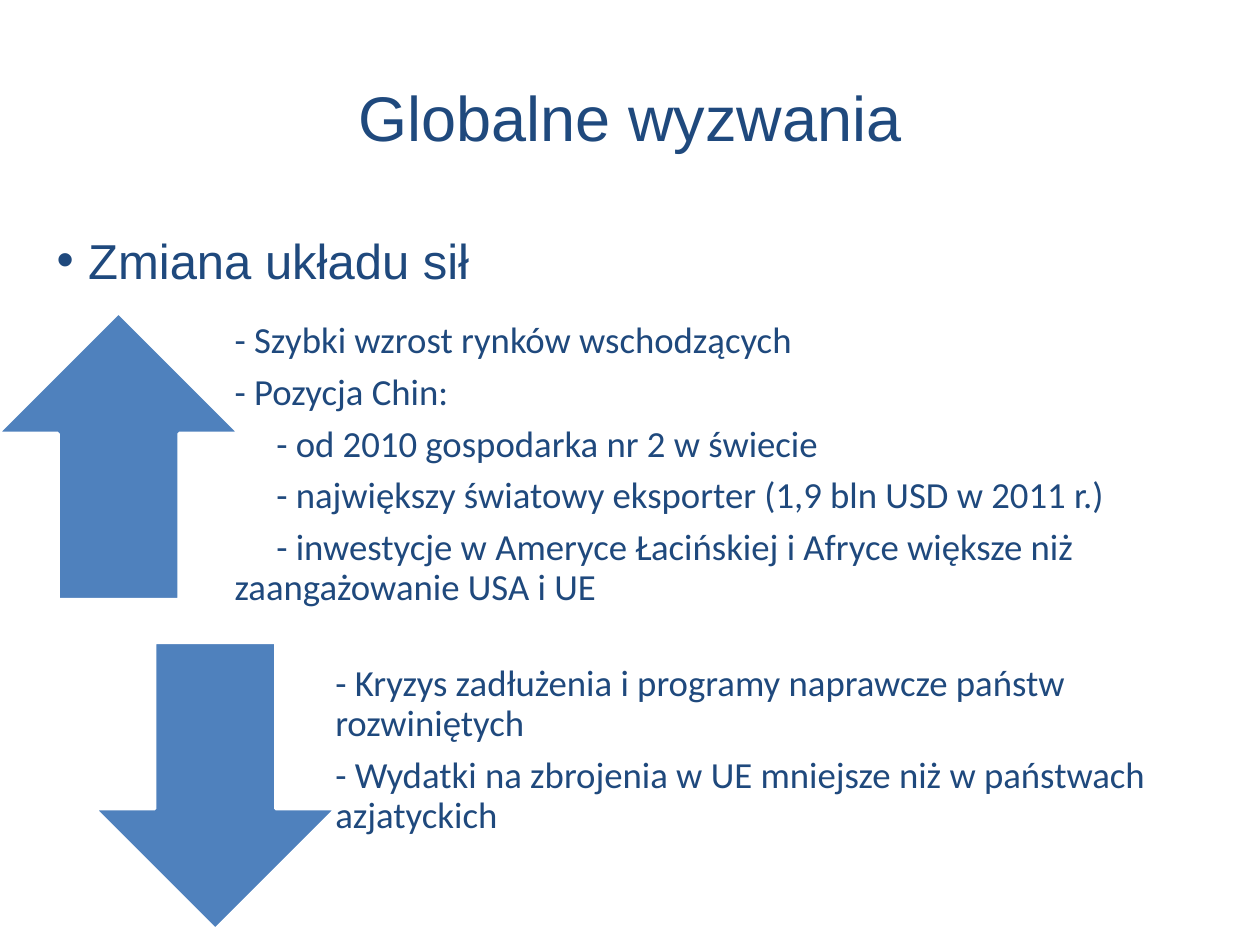
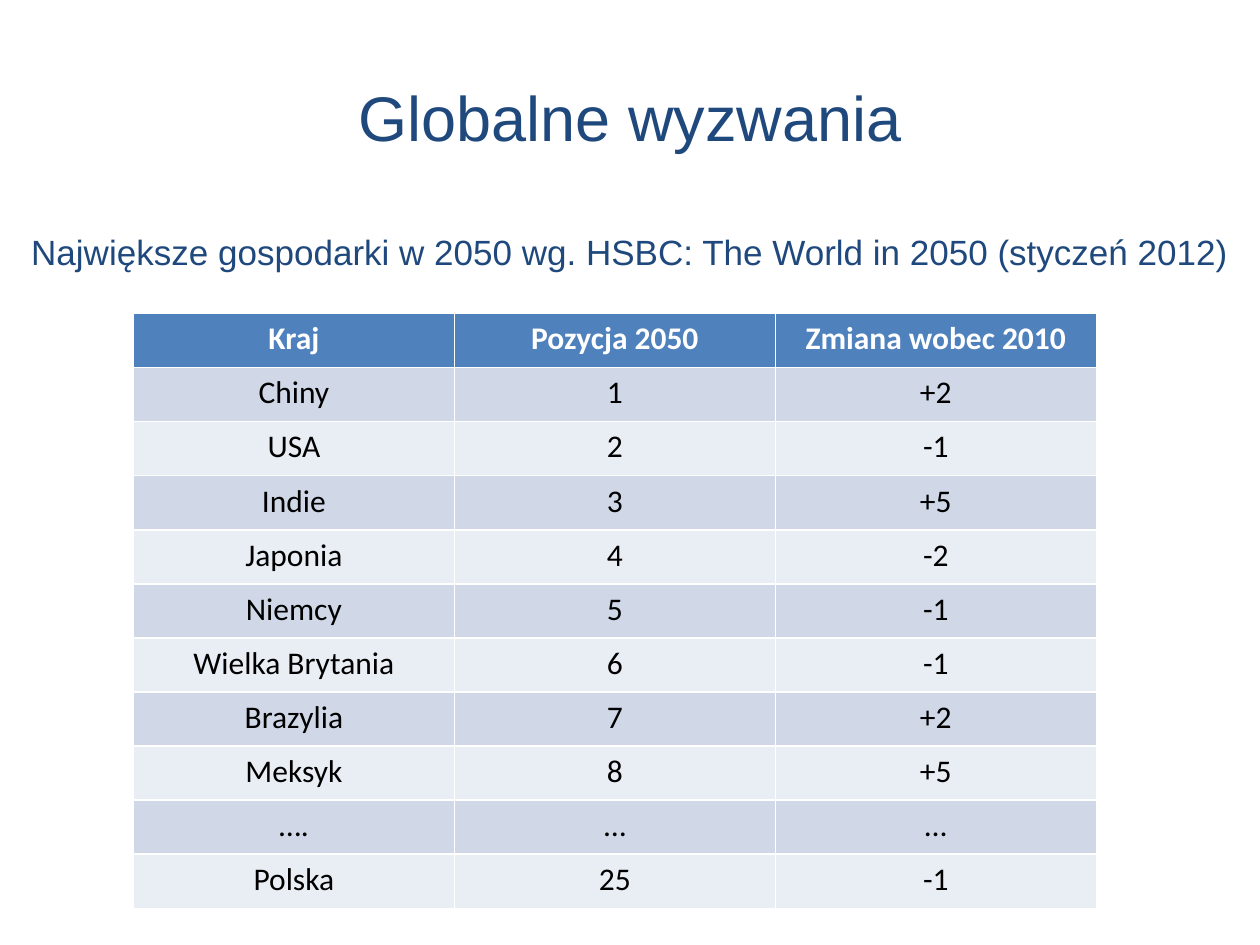
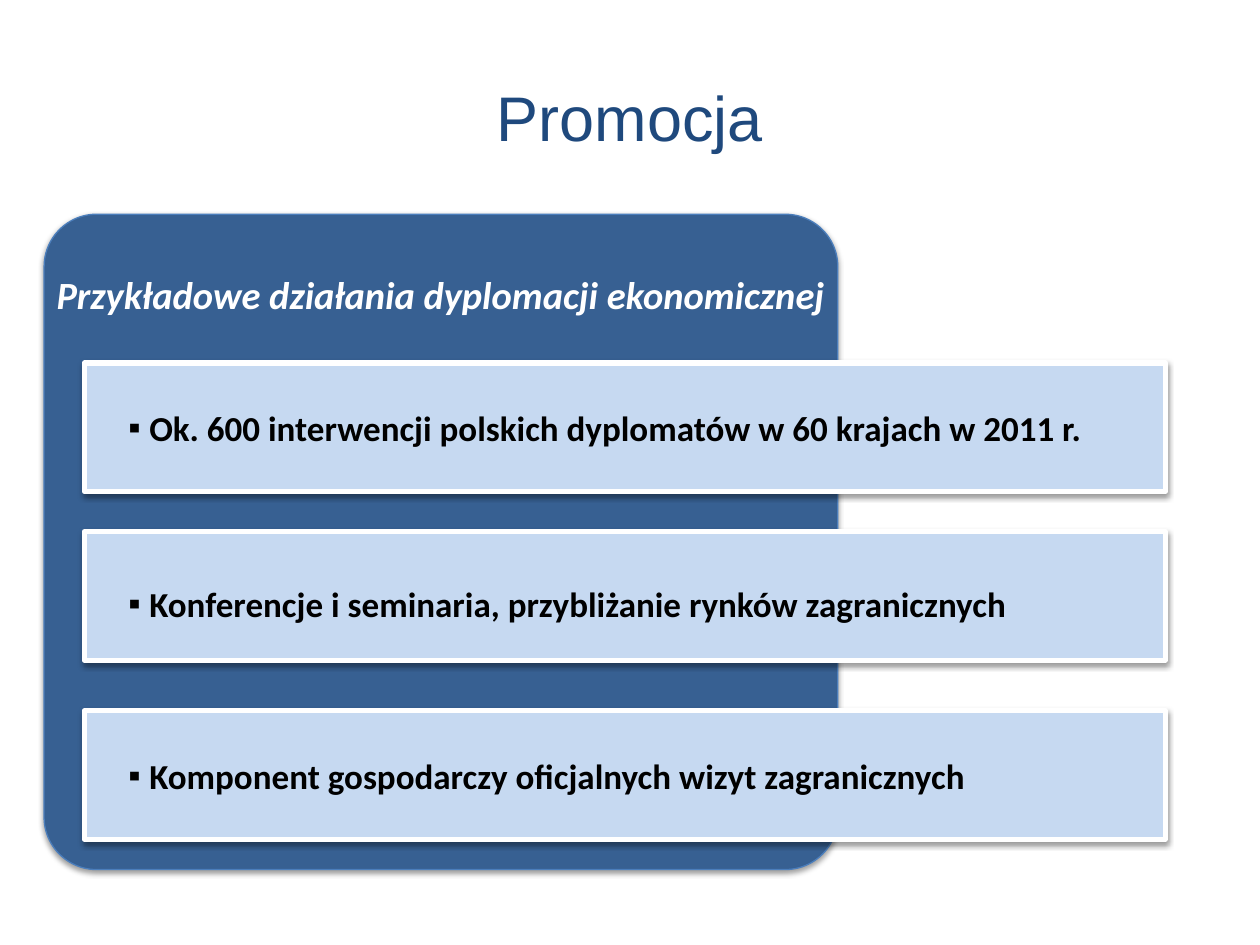
from lxml import etree
from pptx import Presentation
from pptx.dml.color import RGBColor
from pptx.enum.shapes import MSO_SHAPE
from pptx.enum.text import MSO_ANCHOR, PP_ALIGN
from pptx.oxml.ns import qn
from pptx.util import Cm, Pt

NAVY = RGBColor(0x1F, 0x49, 0x7D)
BLUE = RGBColor(0x4F, 0x81, 0xBD)
PANEL_BLUE = RGBColor(0x37, 0x60, 0x92)
PANEL_EDGE = RGBColor(0x4B, 0x7E, 0xBC)
PALE_BLUE = RGBColor(0xC6, 0xD9, 0xF1)
BAND_DARK = RGBColor(0xD0, 0xD8, 0xE8)
BAND_LIGHT = RGBColor(0xE9, 0xED, 0xF4)
WHITE = RGBColor(0xFF, 0xFF, 0xFF)
BLACK = RGBColor(0x00, 0x00, 0x00)
HEADING_FONT, BODY_FONT = "Arial", "Calibri"

LEFT, CENTER = PP_ALIGN.LEFT, PP_ALIGN.CENTER
TOP, MIDDLE = MSO_ANCHOR.TOP, MSO_ANCHOR.MIDDLE
UP_ARROW, DOWN_ARROW = MSO_SHAPE.UP_ARROW, MSO_SHAPE.DOWN_ARROW
RECTANGLE, ROUNDED = MSO_SHAPE.RECTANGLE, MSO_SHAPE.ROUNDED_RECTANGLE

GROWTH = [
    ("- Szybki wzrost rynków wschodzących", 0),
    ("- Pozycja Chin:", 0),
    ("- od 2010 gospodarka nr 2 w świecie", 0.84),
    ("- największy światowy eksporter (1,9 bln USD w 2011 r.)", 0.84),
    ("- inwestycje w Ameryce Łacińskiej i Afryce większe niż zaangażowanie USA i UE", 0.84),
]
DECLINE = [
    ("- Kryzys zadłużenia i programy naprawcze państw rozwiniętych", 0),
    ("- Wydatki na zbrojenia w UE mniejsze niż w państwach azjatyckich", 0),
]
RANKING = [
    ("Kraj", "Pozycja 2050", "Zmiana wobec 2010"),
    ("Chiny", "1", "+2"),
    ("USA", "2", "-1"),
    ("Indie", "3", "+5"),
    ("Japonia", "4", "-2"),
    ("Niemcy", "5", "-1"),
    ("Wielka Brytania", "6", "-1"),
    ("Brazylia", "7", "+2"),
    ("Meksyk", "8", "+5"),
    ("….", "…", "…"),
    ("Polska", "25", "-1"),
]
ACTIVITIES = [
    (7.32, "Ok. 600 interwencji polskich dyplomatów w 60 krajach w 2011 r.", 1),
    (10.72, "Konferencje i seminaria, przybliżanie rynków zagranicznych", 1.34),
    (14.33, "Komponent gospodarczy oficjalnych wizyt zagranicznych", 1),
]


class Deck:
    """Holds the shared style and the slide being built."""

    def __init__(self):
        self.presentation = Presentation()
        self.presentation.slide_width = Cm(25.4)
        self.presentation.slide_height = Cm(19.05)
        self.slide = None

    def new_slide(self, title):
        layout = self.presentation.slide_layouts[6]
        self.slide = self.presentation.slides.add_slide(layout)
        self.text((1.27, 0.76, 22.86, 3.18), title, 36, alignment=CENTER, anchor=MIDDLE)

    def format(self, paragraph, size, color, font=BODY_FONT, bold=False, italic=False):
        for run in paragraph.runs:
            run.font.name = font
            run.font.size = Pt(size)
            run.font.color.rgb = color
            run.font.bold = bold
            run.font.italic = italic

    def bullet(self, paragraph, character, hanging):
        properties = paragraph._p.get_or_add_pPr()
        properties.set("marL", str(Cm(hanging)))
        properties.set("indent", str(-Cm(hanging)))
        etree.SubElement(properties, qn("a:buFont"), typeface="Arial")
        etree.SubElement(properties, qn("a:buChar"), char=character)

    def text_frame(self, box, anchor=TOP):
        frame = self.slide.shapes.add_textbox(*map(Cm, box)).text_frame
        frame.word_wrap = True
        frame.vertical_anchor = anchor
        return frame

    def text(self, box, text, size, color=NAVY, font=HEADING_FONT, alignment=LEFT,
             anchor=TOP, bold=False, italic=False):
        frame = self.text_frame(box, anchor)
        frame.text = text
        paragraph = frame.paragraphs[0]
        paragraph.alignment = alignment
        self.format(paragraph, size, color, font, bold, italic)
        return paragraph

    def points(self, box, points):
        frame = self.text_frame(box)
        frame.margin_left = frame.margin_right = frame.margin_bottom = Cm(0.41)
        frame.margin_top = 0
        for index, (text, indent) in enumerate(points):
            paragraph = frame.add_paragraph() if index else frame.paragraphs[0]
            paragraph.text = text
            paragraph.line_spacing = 0.9
            paragraph.space_after = Pt(7)
            paragraph._p.get_or_add_pPr().set("indent", str(Cm(indent)))
            self.format(paragraph, 21, NAVY)

    def shape(self, kind, box, fill, line, width, shadow=False):
        shape = self.slide.shapes.add_shape(kind, *map(Cm, box))
        shape.fill.solid()
        shape.fill.fore_color.rgb = fill
        shape.line.color.rgb = line
        shape.line.width = Pt(width)
        shape.shadow.inherit = False
        if shadow:
            effects = shape._element.spPr.find(qn("a:effectLst"))
            outer = etree.SubElement(effects, qn("a:outerShdw"), blurRad="40000",
                                     dist="20000", dir="5400000", rotWithShape="0")
            color = etree.SubElement(outer, qn("a:srgbClr"), val=str(BLACK))
            etree.SubElement(color, qn("a:alpha"), val="38000")
        return shape

    def arrow(self, kind, left, top):
        self.shape(kind, (left, top, 4.88, 5.79), BLUE, WHITE, 2)

    def activity(self, top, text, line_spacing):
        bar = self.shape(RECTANGLE, (1.7, top, 21.79, 2.59), PALE_BLUE, WHITE, 3, shadow=True)
        frame = bar.text_frame
        frame.word_wrap = True
        frame.vertical_anchor = MIDDLE
        frame.margin_left = Cm(0.89)
        frame.text = text
        paragraph = frame.paragraphs[0]
        paragraph.alignment = LEFT
        paragraph.line_spacing = line_spacing
        self.bullet(paragraph, "▪", 0.42)
        self.format(paragraph, 20, BLACK, bold=True)

    def table(self, left, top, column_width, row_height, rows):
        columns = len(rows[0])
        table = self.slide.shapes.add_table(
            len(rows), columns, Cm(left), Cm(top),
            Cm(column_width * columns), Cm(row_height * len(rows))).table
        for row_index, row in enumerate(rows):
            header = row_index == 0
            band = BAND_DARK if row_index % 2 else BAND_LIGHT
            for column_index, text in enumerate(row):
                cell = table.cell(row_index, column_index)
                cell.fill.solid()
                cell.fill.fore_color.rgb = BLUE if header else band
                cell.text = text
                paragraph = cell.text_frame.paragraphs[0]
                paragraph.alignment = CENTER
                self.format(paragraph, 18, WHITE if header else BLACK, bold=header)


def main():
    deck = Deck()

    deck.new_slide("Globalne wyzwania")
    deck.arrow(UP_ARROW, -0.05, 6.3)
    deck.points((4.32, 6.48, 20.42, 6.4), GROWTH)
    deck.arrow(DOWN_ARROW, 1.9, 12.95)
    deck.points((6.35, 13.41, 18.06, 4), DECLINE)
    heading = deck.text((0.89, 4.52, 21.21, 1.45), "Zmiana układu sił", 28)
    deck.bullet(heading, "•", 0.64)

    deck.new_slide("Globalne wyzwania")
    deck.text((0, 4.52, 25.4, 1.2),
              "Największe gospodarki w 2050 wg. HSBC: The World in 2050 (styczeń 2012)",
              20, alignment=CENTER)
    deck.table(2.69, 6.32, 6.47, 1.09, RANKING)

    deck.new_slide("Promocja")
    panel = deck.shape(ROUNDED, (0.89, 4.32, 16, 13.21), PANEL_BLUE, PANEL_EDGE, 0.75, shadow=True)
    panel.adjustments[0] = 0.08
    for top, text, line_spacing in ACTIVITIES:
        deck.activity(top, text, line_spacing)
    deck.text((0.89, 5.33, 16.61, 1.19), "Przykładowe działania dyplomacji ekonomicznej",
              22, WHITE, BODY_FONT, bold=True, italic=True)

    deck.presentation.save("out.pptx")


if __name__ == "__main__":
    main()
